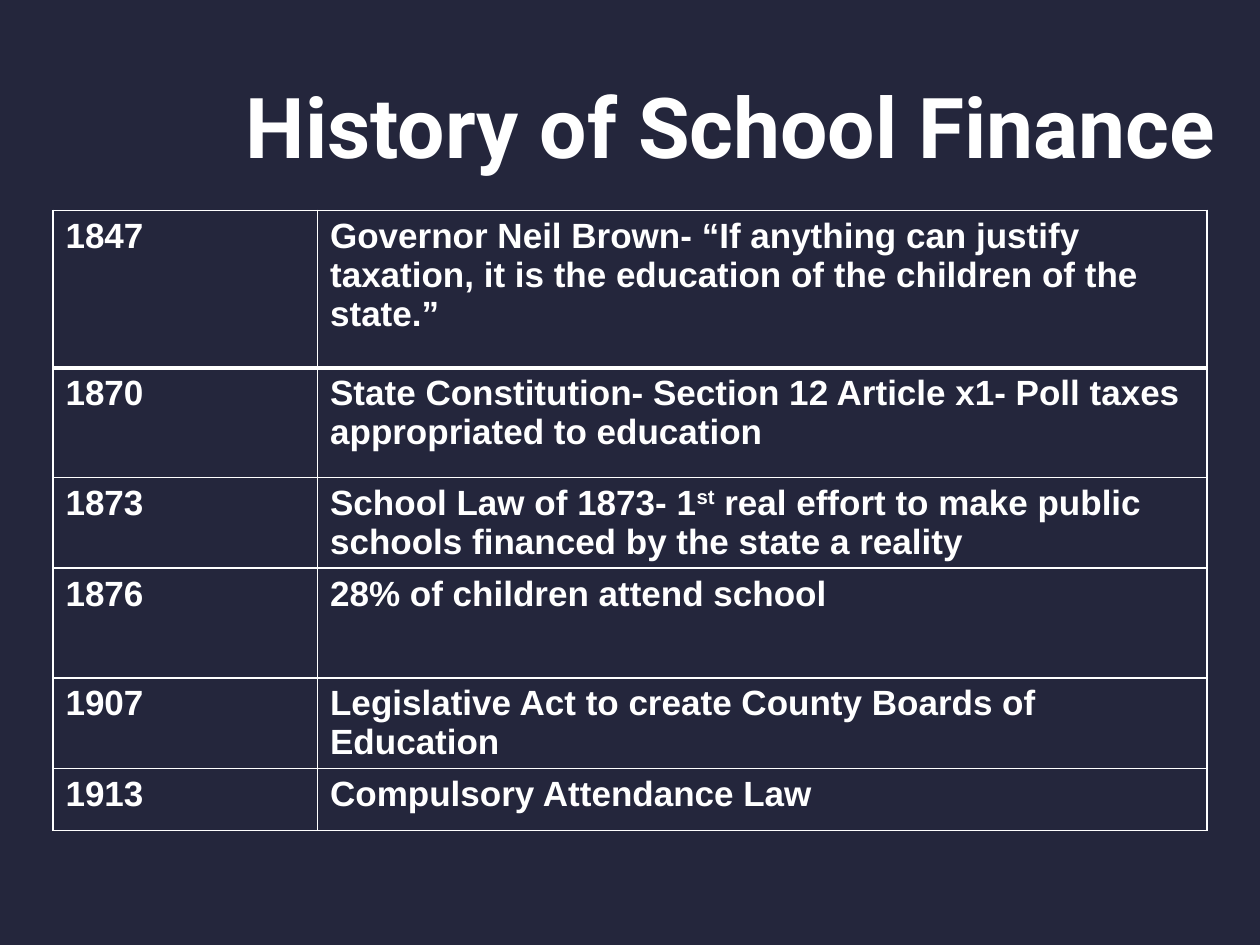
from pptx import Presentation
from pptx.dml.color import RGBColor
from pptx.enum.text import MSO_ANCHOR, MSO_AUTO_SIZE, PP_ALIGN
from pptx.oxml.ns import qn
from pptx.util import Inches, Pt
from lxml.etree import SubElement

NAVY = RGBColor(0x24, 0x26, 0x3C)
WHITE = RGBColor(0xFF, 0xFF, 0xFF)

TITLE_FONT = {"name": "Roboto", "size": Pt(48), "bold": True}
CELL_FONT = {"name": "Arial", "size": Pt(20), "bold": True}

COL_WIDTHS = [2.1, 7.06]
# Row height, year, runs of the event; every second run is superscript
EVENTS = [
    (1.25, "1847", ["Governor Neil Brown- “If anything can justify taxation, "
                    "it is the education of the children of the state.”"]),
    (0.87, "1870", ["State Constitution- Section 12 Article x1- Poll taxes "
                    "appropriated to education"]),
    (0.72, "1873", ["School Law of 1873- 1", "st",
                    " real effort to make public schools financed by the state a reality"]),
    (0.87, "1876", ["28% of children attend school"]),
    (0.72, "1907", ["Legislative Act to create County Boards of Education"]),
    (0.49, "1913", ["Compulsory Attendance Law"]),
]


def style_font(font, formats):
    for name, value in formats.items():
        setattr(font, name, value)
    font.color.rgb = WHITE


def add_title(s, text):
    sp = s.shapes.title
    sp.left, sp.top, sp.width, sp.height = map(Inches, (0.42, -0.17, 9.33, 1.61))
    tf = sp.text_frame
    tf.auto_size = MSO_AUTO_SIZE.NONE
    tf.vertical_anchor = MSO_ANCHOR.BOTTOM
    p = tf.paragraphs[0]
    p.alignment = PP_ALIGN.RIGHT
    r = p.add_run()
    r.text = text
    style_font(r.font, TITLE_FONT)


def set_borders(cell, top=1, bottom=1):
    """Draw white lines on all four sides, with widths in points."""
    tcPr = cell._tc.get_or_add_tcPr()
    for side, width in {"L": 1, "R": 1, "T": top, "B": bottom}.items():
        ln = SubElement(tcPr, qn(f"a:ln{side}"), w=str(Pt(width)))
        fill = SubElement(ln, qn("a:solidFill"))
        SubElement(fill, qn("a:srgbClr"), val=str(WHITE))


def fill_cell(cell, runs):
    p = cell.text_frame.paragraphs[0]
    for i, text in enumerate(runs):
        r = p.add_run()
        r.text = text
        style_font(r.font, CELL_FONT)
        if i % 2:
            r._r.get_or_add_rPr().set("baseline", "30000")


def add_event_table(s):
    height = sum(event[0] for event in EVENTS)
    frame = s.shapes.add_table(len(EVENTS), len(COL_WIDTHS), Inches(0.42), Inches(1.67),
                               Inches(sum(COL_WIDTHS)), Inches(height))
    table = frame.table
    table.first_row = table.horz_banding = False
    for col, width in zip(table.columns, COL_WIDTHS):
        col.width = Inches(width)
    for i, (row_height, year, event) in enumerate(EVENTS):
        row = table.rows[i]
        row.height = Inches(row_height)
        for cell, runs in zip(row.cells, ([year], event)):
            fill_cell(cell, runs)
            set_borders(cell, top=3 if i == 1 else 1, bottom=3 if i == 0 else 1)
            cell.fill.background()


def main():
    prs = Presentation()
    prs.slide_width, prs.slide_height = Inches(10), Inches(7.5)
    s = prs.slides.add_slide(prs.slide_layouts[5])
    s.background.fill.solid()
    s.background.fill.fore_color.rgb = NAVY
    add_title(s, "History of School Finance")
    add_event_table(s)
    prs.save("out.pptx")


if __name__ == "__main__":
    main()
